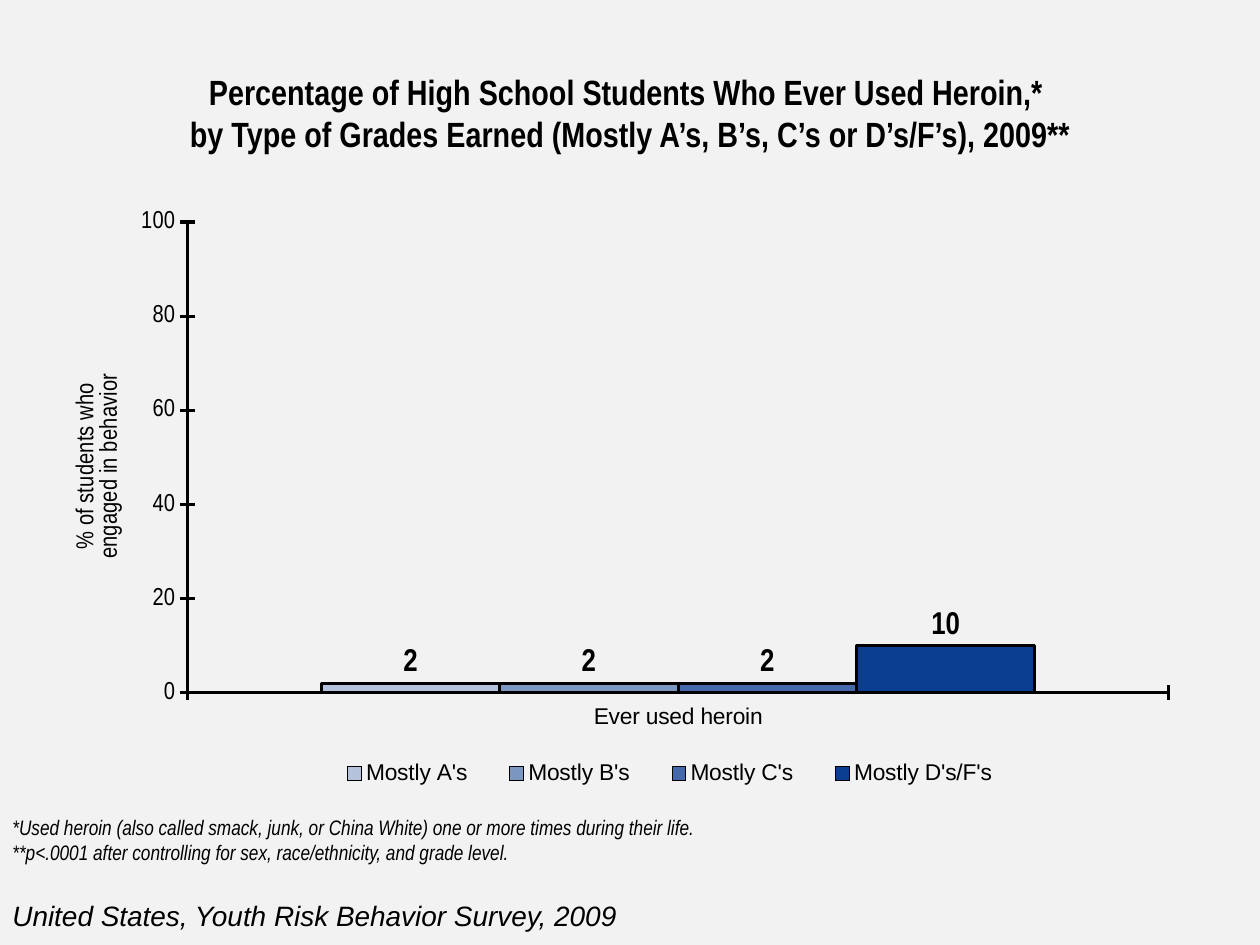
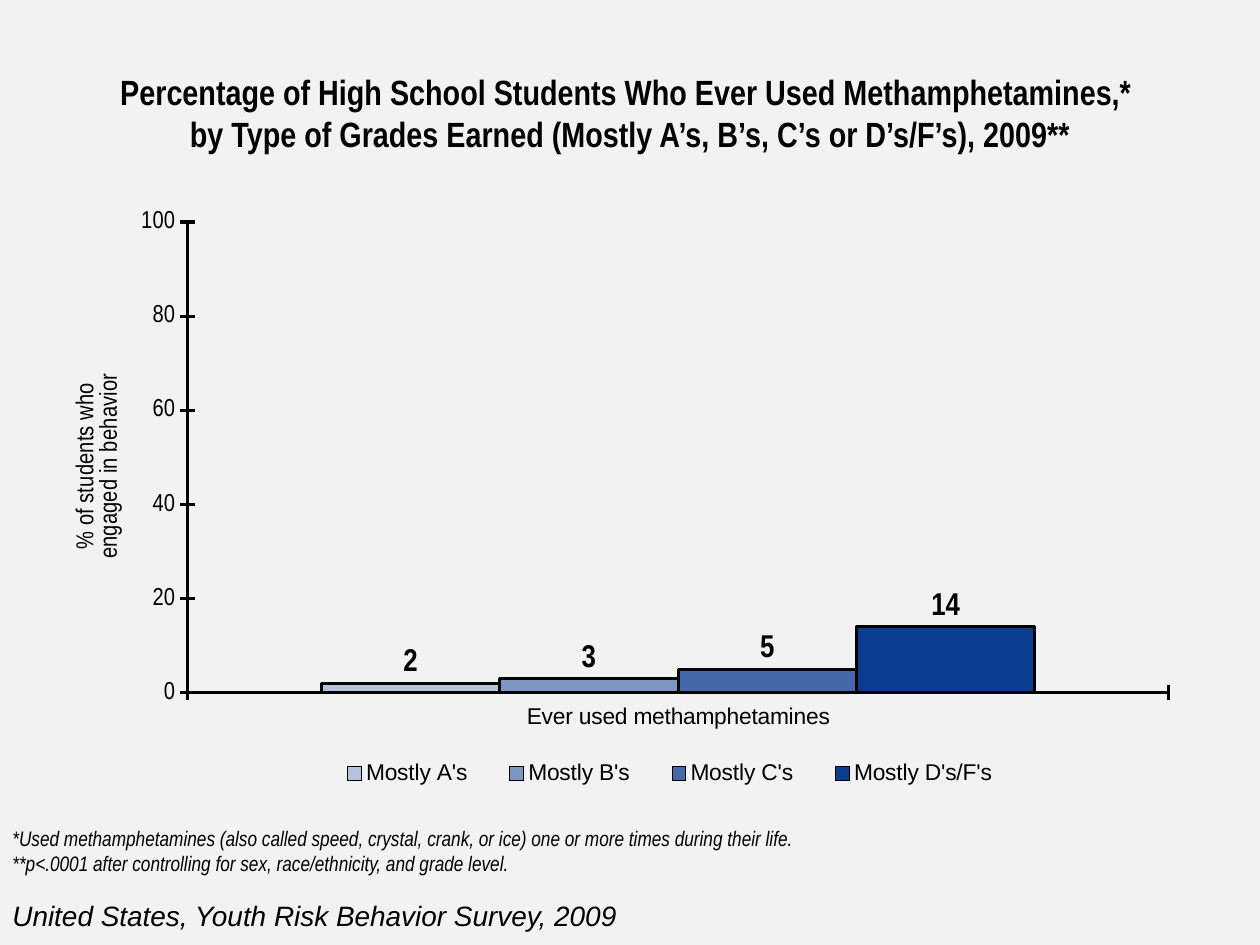
from lxml import etree
from pptx import Presentation
from pptx.chart.data import CategoryChartData
from pptx.dml.color import RGBColor
from pptx.enum.chart import XL_CHART_TYPE, XL_LABEL_POSITION, XL_LEGEND_POSITION, XL_TICK_MARK
from pptx.enum.text import MSO_ANCHOR, PP_ALIGN
from pptx.oxml.ns import qn
from pptx.util import Pt

COLUMNS = XL_CHART_TYPE.COLUMN_CLUSTERED
OUTSIDE_END = XL_LABEL_POSITION.OUTSIDE_END
LEGEND_BOTTOM = XL_LEGEND_POSITION.BOTTOM
TICK_CROSS = XL_TICK_MARK.CROSS
MIDDLE, LEFT, CENTER = MSO_ANCHOR.MIDDLE, PP_ALIGN.LEFT, PP_ALIGN.CENTER

SANS, NARROW = "Arial", "Arial Narrow"
BLACK, BACKGROUND = "000000", "F2F2F2"
GRADES = {"Mostly A's": "B5C2DB", "Mostly B's": "7C96C2",
          "Mostly C's": "4469AA", "Mostly D's/F's": "0B3D91"}

# Boxes are left, top, width, height in points
TITLE_BOX = (0, 24, 720, 80)
CHART_BOX = (36, 108, 648, 356.4)
SOURCE_BOX = (0, 510, 378, 27)
SOURCE = "United States, Youth Risk Behavior Survey, 2009"

SLIDES = [
    dict(drug="Heroin", values=[2, 2, 2, 10], note_box=(0, 462, 408, 37),
         note="*Used heroin (also called smack, junk, or China White) "
              "one or more times during their life."),
    dict(drug="Methamphetamines", values=[2, 3, 5, 14], note_box=(0, 468, 522, 37),
         note="*Used methamphetamines (also called speed, crystal, crank, or ice) "
              "one or more times during their life."),
]


def color(value):
    return RGBColor.from_string(value)


def set_font(font, size, name=SANS, bold=False, italic=False):
    font.size, font.name = Pt(size), name
    font.bold, font.italic = bold, italic
    font.color.rgb = color(BLACK)


def write(tf, text, align=LEFT, **style):
    tf.word_wrap = True
    tf.text = text
    for p in tf.paragraphs:
        p.alignment = align
        for r in p.runs:
            set_font(r.font, **style)


def place(sp, box):
    sp.left, sp.top, sp.width, sp.height = map(Pt, box)


def add_text(slide, box, text, **style):
    sp = slide.shapes.add_textbox(*map(Pt, box))
    write(sp.text_frame, text, **style)


def set_line(line):
    line.color.rgb = color(BLACK)
    line.width = Pt(1.75)


def set_layout(parent, index, inner=False, **fractions):
    """Fix a chart part's place as fractions of the chart."""
    for old in parent.findall(qn("c:layout")):
        parent.remove(old)
    layout = etree.Element(qn("c:layout"))
    manual = etree.SubElement(layout, qn("c:manualLayout"))
    if inner:
        etree.SubElement(manual, qn("c:layoutTarget"), val="inner")
    for key in ("xMode", "yMode"):
        etree.SubElement(manual, qn("c:" + key), val="edge")
    for key, value in fractions.items():
        etree.SubElement(manual, qn("c:" + key), val=str(value))
    parent.insert(index, layout)


def add_title(slide, drug):
    sp = slide.shapes.title
    place(sp, TITLE_BOX)
    tf = sp.text_frame
    tf.margin_left = tf.margin_top = tf.margin_right = tf.margin_bottom = 0
    tf.vertical_anchor = MIDDLE
    write(tf, f"Percentage of High School Students Who Ever Used {drug},* \v"
              "by Type of Grades Earned (Mostly A’s, B’s, C’s or D’s/F’s), 2009**",
          align=CENTER, size=20, name=NARROW, bold=True)


def format_axis(axis, size, name):
    axis.has_major_gridlines = False
    axis.major_tick_mark = TICK_CROSS
    set_font(axis.tick_labels.font, size, name)
    set_line(axis.format.line)


def add_grades_chart(slide, box, drug, values):
    data = CategoryChartData()
    data.categories = [f"Ever used {drug.lower()}"]
    for grade, value in zip(GRADES, values):
        data.add_series(grade, [value])
    chart = slide.shapes.add_chart(COLUMNS, *map(Pt, box), data).chart
    chart.has_title = False
    set_font(chart.font, 18)
    set_layout(chart._chartSpace.chart.plotArea, 0, inner=True,
               x=0.11, y=0.053, w=0.865, h=0.755)

    # Columns and their values
    plot = chart.plots[0]
    plot.vary_by_categories = False
    plot.gap_width, plot.overlap = 150, 0
    for series, fill in zip(plot.series, GRADES.values()):
        series.format.fill.solid()
        series.format.fill.fore_color.rgb = color(fill)
        set_line(series.format.line)
    plot.has_data_labels = True
    labels = plot.data_labels
    labels.show_value, labels.position = True, OUTSIDE_END
    set_font(labels.font, 18, NARROW, bold=True)

    # Axes
    format_axis(chart.category_axis, 13, SANS)
    axis = chart.value_axis
    format_axis(axis, 14, NARROW)
    axis.minimum_scale, axis.maximum_scale, axis.major_unit = 0, 100, 20
    title = axis.axis_title
    write(title.text_frame, "% of students who\nengaged in behavior",
          align=CENTER, size=14, name=NARROW)
    set_layout(title._element, 1, x=0.005, y=0.29)

    # Legend
    chart.has_legend = True
    legend = chart.legend
    legend.position, legend.include_in_layout = LEGEND_BOTTOM, False
    set_font(legend.font, 13)
    set_layout(legend._element, 1, x=0.22, y=0.905, w=0.63, h=0.065)


def add_survey_slide(prs, drug, values, note, note_box):
    slide = prs.slides.add_slide(prs.slide_layouts[5])
    add_title(slide, drug)
    add_grades_chart(slide, CHART_BOX, drug, values)
    add_text(slide, note_box,
             note + "\n**p<.0001 after controlling for sex, race/ethnicity, and grade level.",
             size=12, name=NARROW, italic=True)
    add_text(slide, SOURCE_BOX, SOURCE, size=16, italic=True)


def main():
    prs = Presentation()
    prs.slide_width, prs.slide_height = Pt(720), Pt(540)
    fill = prs.slide_master.background.fill
    fill.solid()
    fill.fore_color.rgb = color(BACKGROUND)
    for content in SLIDES:
        add_survey_slide(prs, **content)
    prs.save("out.pptx")


if __name__ == "__main__":
    main()
